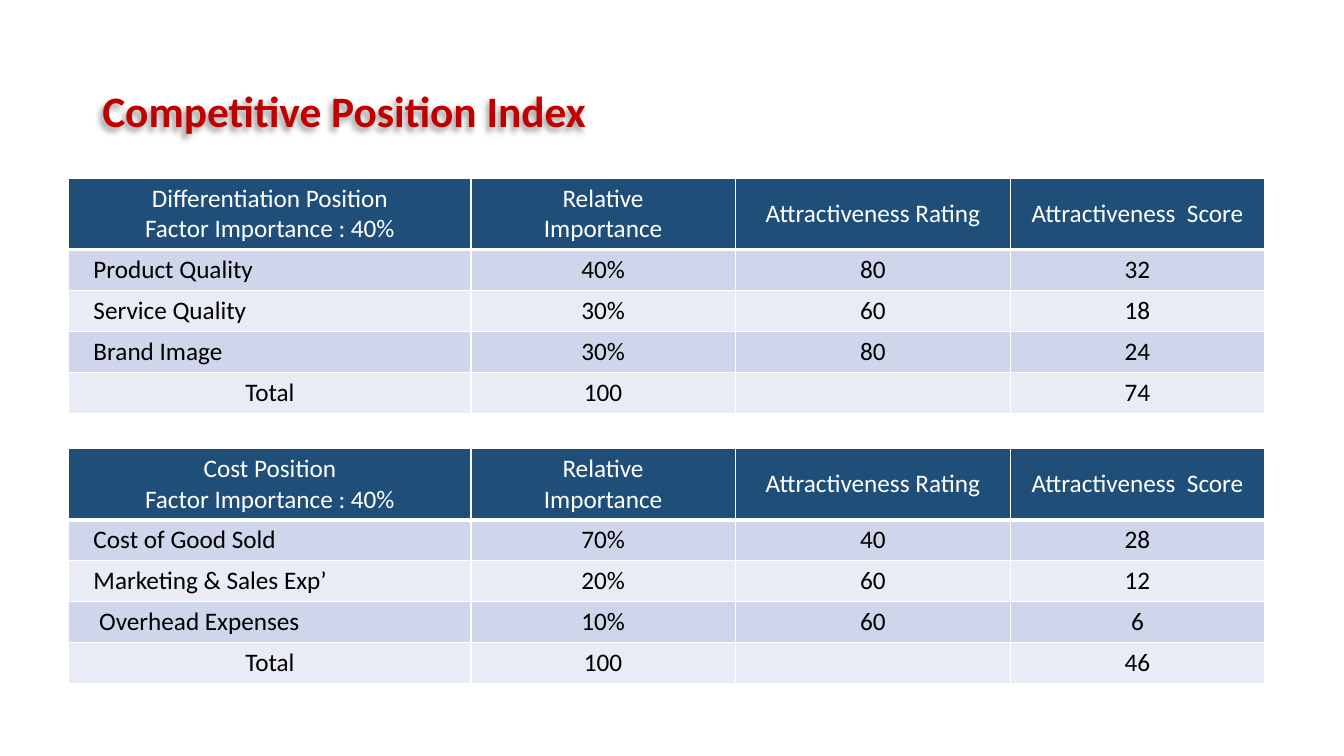
from itertools import accumulate

from lxml import etree
from pptx import Presentation
from pptx.dml.color import RGBColor
from pptx.enum.text import MSO_ANCHOR, PP_ALIGN
from pptx.oxml import parse_xml
from pptx.oxml.ns import qn
from pptx.util import Pt

LEFT, CENTER = PP_ALIGN.LEFT, PP_ALIGN.CENTER
MIDDLE = MSO_ANCHOR.MIDDLE

TITLE = "Competitive Position Index"
COLUMN_HEADS = [["Relative", "Importance"], ["Attractiveness Rating"], ["Attractiveness  Score"]]
# Each factor: label, importance, rating, score, label indent
POSITIONS = [
    {
        "head": ["Differentiation Position", "Factor Importance : 40%"],
        "factors": [
            ("Product Quality", "40%", "80", "32", 8),
            ("Service Quality", "30%", "60", "18", 8),
            ("Brand Image", "30%", "80", "24", 8),
        ],
        "total": ("Total", "100", "", "74"),
    },
    {
        "head": ["Cost Position", "Factor Importance : 40%"],
        "factors": [
            ("Cost of Good Sold", "70%", "40", "28", 8),
            ("Marketing & Sales Exp’", "20%", "60", "12", 8),
            ("Overhead Expenses", "10%", "60", "6", 12),
        ],
        "total": ("Total", "100", "", "46"),
    },
]

THEME = {
    "font": "Calibri",
    "title_size": 31,
    "table_size": 18,
    "title": "C00000",
    "head_fill": "1F4E79",
    "head_text": "FFFFFF",
    "body_text": "000000",
    "bands": ["CFD5EA", "E9EBF5"],
    "border": "FFFFFF",
    "shadow": "000000",
}

SLIDE_WIDTH, SLIDE_HEIGHT = 960, 540
TITLE_BOX = (66, 28.8, 828, 104.4)
TABLE_LEFT, TABLE_TOP, TABLE_STEP = 49.2, 127.2, 193
COLUMN_WIDTHS = [287.2, 188.8, 196.6, 181.4]
HEAD_HEIGHT, ROW_HEIGHT = 51, 29.3
SIDE_MARGIN, EDGE_MARGIN = 9.6, 3.6
THIN, THICK = 1, 3


def add_span(para, text, size, color, bold=False):
    span = para.add_run()
    span.text = text
    span.font.name = THEME["font"]
    span.font.size = Pt(size)
    span.font.bold = bold
    span.font.color.rgb = RGBColor.from_string(color)


def add_soft_shadow(box):
    """Give the unfilled box a blurred shadow, which falls behind its letters."""
    box._element.spPr.append(parse_xml(
        '<a:effectLst xmlns:a="http://schemas.openxmlformats.org/drawingml/2006/main">'
        f'<a:outerShdw blurRad="{Pt(4)}" dist="{Pt(3)}" dir="8100000" algn="tr" rotWithShape="0">'
        f'<a:srgbClr val="{THEME["shadow"]}"><a:alpha val="40000"/></a:srgbClr>'
        '</a:outerShdw></a:effectLst>'
    ))


def add_title(page):
    box = page.shapes.add_textbox(*map(Pt, TITLE_BOX))
    frame = box.text_frame
    frame.word_wrap = True
    frame.vertical_anchor = MIDDLE
    para = frame.paragraphs[0]
    para.line_spacing = 0.9
    add_span(para, TITLE, THEME["title_size"], THEME["title"], bold=True)
    add_soft_shadow(box)


def set_borders(cell, bottom):
    properties = cell._tc.get_or_add_tcPr()
    for side, width in (("L", THIN), ("R", THIN), ("T", THIN), ("B", bottom)):
        line = etree.SubElement(properties, qn(f"a:ln{side}"), w=str(Pt(width)))
        fill = etree.SubElement(line, qn("a:solidFill"))
        etree.SubElement(fill, qn("a:srgbClr"), val=THEME["border"])


def fill_cell(cell, lines, fill, color, align=CENTER, indent=0, bottom=THIN):
    set_borders(cell, bottom)
    cell.fill.solid()
    cell.fill.fore_color.rgb = RGBColor.from_string(fill)
    cell.vertical_anchor = MIDDLE
    cell.margin_left = Pt(SIDE_MARGIN + indent)
    cell.margin_right = Pt(SIDE_MARGIN)
    cell.margin_top = cell.margin_bottom = Pt(EDGE_MARGIN)
    frame = cell.text_frame
    for number, text in enumerate(lines):
        para = frame.add_paragraph() if number else frame.paragraphs[0]
        para.alignment = align
        if text:
            add_span(para, text, THEME["table_size"], color)
        else:
            para.font.size = Pt(THEME["table_size"])


def add_position_table(page, position, top):
    rows = [factor[:4] for factor in position["factors"]] + [position["total"]]
    indents = [factor[4] for factor in position["factors"]]
    heights = [HEAD_HEIGHT] + [ROW_HEIGHT] * len(rows)
    table = page.shapes.add_table(
        len(heights), len(COLUMN_WIDTHS), Pt(TABLE_LEFT), Pt(top),
        Pt(sum(COLUMN_WIDTHS)), Pt(sum(heights)),
    ).table
    for column, width in zip(table.columns, COLUMN_WIDTHS):
        column.width = Pt(width)
    for row, height in zip(table.rows, heights):
        row.height = Pt(height)

    for column, lines in enumerate([position["head"]] + COLUMN_HEADS):
        fill_cell(table.cell(0, column), lines, THEME["head_fill"], THEME["head_text"], bottom=THICK)
    for number, values in enumerate(rows):
        band = THEME["bands"][number % 2]
        for column, value in enumerate(values):
            is_label = column == 0 and number < len(indents)
            fill_cell(
                table.cell(number + 1, column), [value], band, THEME["body_text"],
                align=LEFT if is_label else CENTER,
                indent=indents[number] if is_label else 0,
            )


def main():
    deck = Presentation()
    deck.slide_width, deck.slide_height = Pt(SLIDE_WIDTH), Pt(SLIDE_HEIGHT)
    page = deck.slides.add_slide(deck.slide_layouts[6])
    add_title(page)
    tops = accumulate([TABLE_TOP] + [TABLE_STEP] * (len(POSITIONS) - 1))
    for position, top in zip(POSITIONS, tops):
        add_position_table(page, position, top)
    deck.save("out.pptx")


if __name__ == "__main__":
    main()
